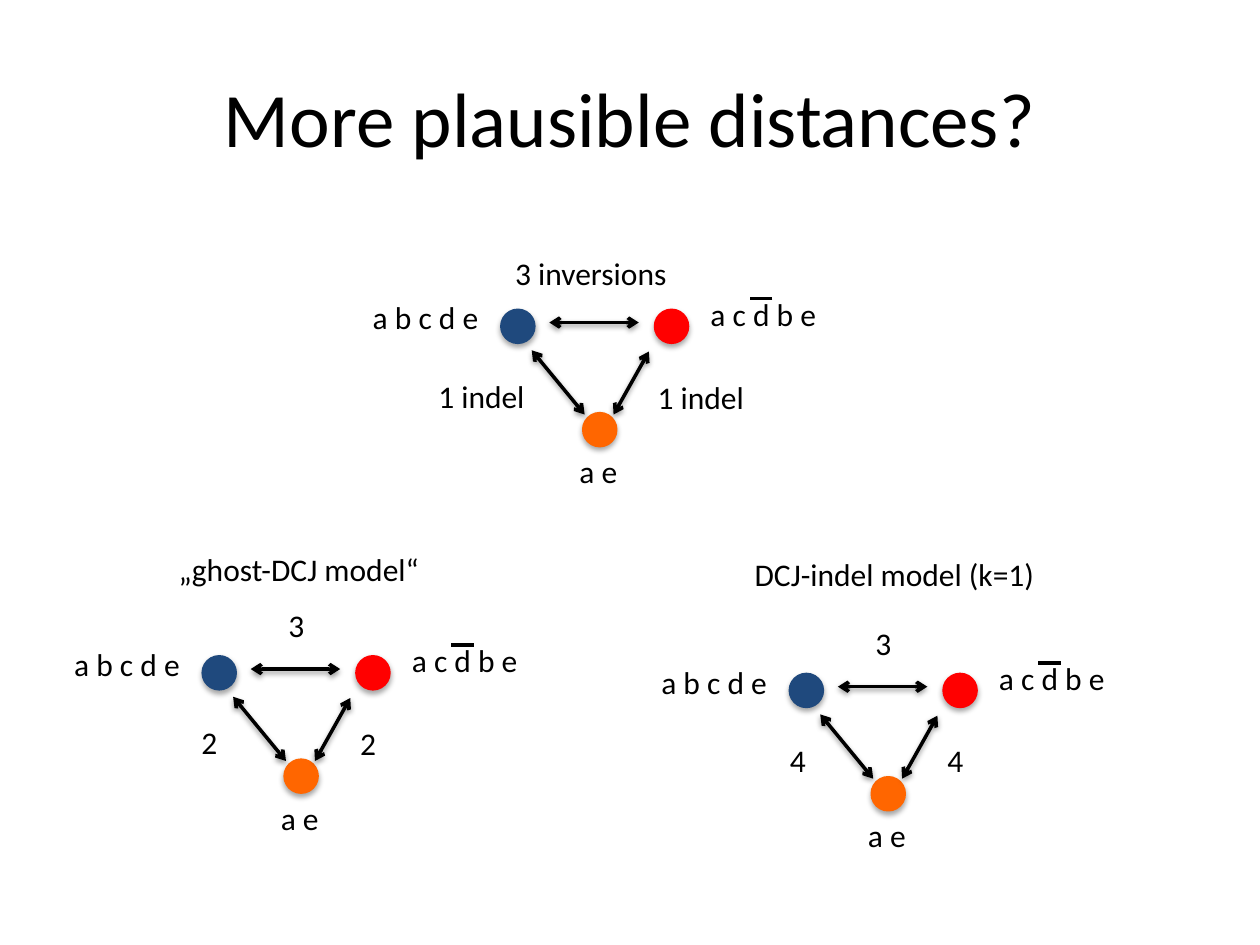
from lxml.etree import SubElement
from pptx import Presentation
from pptx.dml.color import RGBColor
from pptx.enum.shapes import MSO_CONNECTOR, MSO_SHAPE
from pptx.enum.text import MSO_ANCHOR, MSO_AUTO_SIZE, PP_ALIGN
from pptx.oxml.ns import qn
from pptx.util import Inches, Pt

BLACK = RGBColor(0x00, 0x00, 0x00)
BLUE = RGBColor(0x1F, 0x49, 0x7D)
RED = RGBColor(0xFF, 0x00, 0x00)
ORANGE = RGBColor(0xFF, 0x66, 0x00)
FONT = "Calibri"

prs = Presentation()
prs.slide_width, prs.slide_height = Inches(10), Inches(7.5)
col, row = prs.slide_width / 100, prs.slide_height / 75
slide = prs.slides.add_slide(prs.slide_layouts[5])


def write(frame, text, size):
    frame.text = text
    font = frame.paragraphs[0].runs[0].font
    font.name, font.size, font.color.rgb = FONT, Pt(size), BLACK


def add_shadow(item, distance, opacity):
    effects = SubElement(item.element.spPr, qn("a:effectLst"))
    if opacity:
        shadow = SubElement(effects, qn("a:outerShdw"), blurRad=str(Pt(3.1)),
                            dist=str(Pt(distance)), dir="5400000", rotWithShape="0")
        color = SubElement(shadow, qn("a:srgbClr"), val=str(BLACK))
        SubElement(color, qn("a:alpha"), val=str(opacity * 1000))


title = slide.shapes.title
title.left, title.top = int(5 * col), int(3 * row)
title.width, title.height = int(90 * col), int(12.5 * row)
write(title.text_frame, "More plausible distances?", 44)
title.text_frame.vertical_anchor = MSO_ANCHOR.MIDDLE
title.text_frame.paragraphs[0].alignment = PP_ALIGN.CENTER

genomes = [("a b c d e", -11.3, -1.5, 10.5), ("a e", 5.1, 10.7, 5.1),
           ("a c d b e", 15.5, -1.8, 10.5)]
dots = [(RED, 12.2, 0), (BLUE, 0, 0), (ORANGE, 6.5, 8.2)]
lines = [(2.3, 3.1, 6.5, 8.2, True), (11.6, 3.2, 8.8, 8.2, True),
         (3.7, 0.9, 10.8, 0.9, True), (21.4, -1, 19.6, -1, False)]

top_model = [("3 inversions", 0, -5, 14.3), ("1 indel", -6.1, 4.7, 8.9),
             ("1 indel", 11.3, 4.8, 8.9)]
ghost_model = [("3", 5.7, -4.6, 3.3), ("2", -1.2, 4.7, 3.3), ("2", 11.4, 4.8, 3.3),
               ("„ghost-DCJ model“", -3, -9, 21.3)]
indel_model = [("3", 5.7, -4.6, 3.3), ("4", -1.1, 4.7, 3.3), ("4", 11.4, 4.7, 3.3),
               ("DCJ-indel model (k=1)", -3.9, -10, 24.4)]
triangles = [(39.9, 24.7, top_model, False), (16.2, 52.2, ghost_model, True),
             (62.8, 53.6, indel_model, True)]

for x, y, distances, grouped in triangles:
    shapes = slide.shapes.add_group_shape().shapes if grouped else slide.shapes

    for color, dx, dy in dots:
        dot = shapes.add_shape(MSO_SHAPE.OVAL, int((x + dx) * col), int((y + dy) * row),
                               int(2.4 * col), int(2.4 * row))
        dot.fill.solid()
        dot.fill.fore_color.rgb = dot.line.color.rgb = color
        dot.line.width = Pt(3)
        add_shadow(dot, 1.8, 35)

    for x1, y1, x2, y2, is_arrow in lines:
        line = shapes.add_connector(MSO_CONNECTOR.STRAIGHT,
                                    int((x + x1) * col), int((y + y1) * row),
                                    int((x + x2) * col), int((y + y2) * row))
        line.line.color.rgb = BLACK
        line.line.width = Pt(2)
        if is_arrow:
            for end in ("a:headEnd", "a:tailEnd"):
                SubElement(line.element.spPr.find(qn("a:ln")), qn(end), type="arrow")
        add_shadow(line, 1.6, 38 if is_arrow else 0)

    for text, dx, dy, width in genomes + distances:
        label = shapes.add_textbox(int((x + dx) * col), int((y + dy) * row),
                                   int(width * col), int(4 * row))
        label.text_frame.word_wrap = False
        label.text_frame.auto_size = MSO_AUTO_SIZE.SHAPE_TO_FIT_TEXT
        write(label.text_frame, text, 18)

prs.save("out.pptx")
